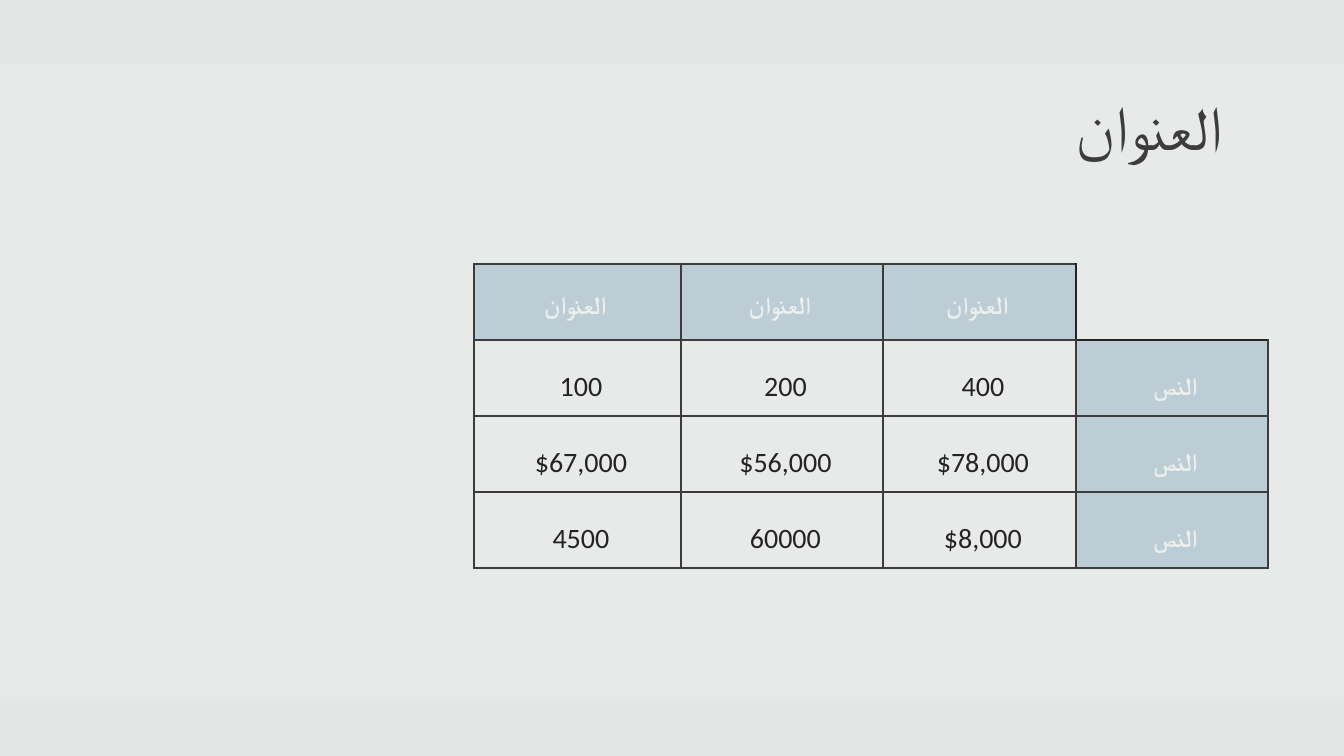
"""Build a slide with a right-aligned title and a table with headed sides."""
import pptx
import pptx.util
import pptx.dml.color
import pptx.enum.shapes
import pptx.enum.text
import pptx.oxml.ns
from dataclasses import dataclass
from lxml import etree

TITLE = "العنوان"
ROWS = [
    ["العنوان", "العنوان", "العنوان", ""],
    ["100", "200", "400", "النص"],
    ["$67,000", "$56,000", "$78,000", "النص"],
    ["4500", "60000", "$8,000", "النص"],
]
SLIDE = (1344, 756)
BAND = (0, 64, 1344, 633)
HEAD = (508, 83, 725, 85)
GRID = (474, 264)
COLS = [207, 202, 193, 192]
TALL = 76
PADS = {"head": (0, 27, 4, 0), "body": (11, 20, 4, 2)}


@dataclass(frozen=True)
class Theme:
    """Hold the colours, font and type sizes."""
    back: str = "E3E6E5"
    pale: str = "EDEFED"
    blue: str = "BCCDD6"
    line: str = "3C3C3C"
    ink: str = "232323"
    font: str = "Calibri"
    title: int = 44
    label: int = 18
    value: int = 20


LOOK = Theme()
QN = pptx.oxml.ns.qn
ALIGN = pptx.enum.text.PP_ALIGN
ANCHOR = pptx.enum.text.MSO_ANCHOR
THICK = (LOOK.line, 1.5)
THIN = (LOOK.ink, 1)


def px(num):
    """Turn px into EMU."""
    return round(num * 914400 / 100.8)


def rgb(code):
    """Turn a hex code into a colour."""
    return pptx.dml.color.RGBColor.from_string(code)


def write(frame, text, size, tint, align, bold=False):
    """Put one styled paragraph in a text frame."""
    frame.text = text
    para = frame.paragraphs[0]
    para.alignment = align
    for run in para.runs:
        font = run.font
        font.name, font.size, font.bold = LOOK.font, pptx.util.Pt(size), bold
        font.color.rgb = rgb(tint)
        etree.SubElement(run._r.get_or_add_rPr(), QN("a:cs"), typeface=LOOK.font)


def edge(cell, side, pen):
    """Draw one side of a cell, or hide it when there is no pen."""
    line = etree.SubElement(cell._tc.get_or_add_tcPr(), QN("a:ln" + side))
    if pen is None:
        etree.SubElement(line, QN("a:noFill"))
        return
    tint, width = pen
    line.set("w", str(pptx.util.Pt(width)))
    fill = etree.SubElement(line, QN("a:solidFill"))
    etree.SubElement(fill, QN("a:srgbClr"), val=tint)


def pens(row, col):
    """Choose the four side pens of a cell."""
    sides = dict.fromkeys("LRTB", THICK)
    last = len(COLS) - 1
    if (row, col) == (0, last):
        sides = {"L": THIN, "R": None, "T": None, "B": THIN}
    elif (row, col) == (0, last - 1):
        sides["R"] = THIN
    elif (row, col) == (1, last):
        sides["T"] = THIN
    return sides


def add_band(slide):
    """Add the pale band behind the content."""
    kind = pptx.enum.shapes.MSO_SHAPE.RECTANGLE
    band = slide.shapes.add_shape(kind, *map(px, BAND))
    band.shadow.inherit = False
    band.fill.solid()
    band.fill.fore_color.rgb = rgb(LOOK.pale)
    tint = band.fill._xPr.find(".//" + QN("a:srgbClr"))
    etree.SubElement(tint, QN("a:alpha"), val="55000")
    band.line.fill.background()


def add_grid(slide):
    """Add the table with its top and right headings."""
    size = (sum(COLS), TALL * len(ROWS))
    spot = map(px, GRID + size)
    table = slide.shapes.add_table(len(ROWS), len(COLS), *spot).table
    table.first_row = table.horz_banding = False
    for col, wide in zip(table.columns, COLS):
        col.width = px(wide)
    for r, texts in enumerate(ROWS):
        table.rows[r].height = px(TALL)
        for c, text in enumerate(texts):
            cell = table.cell(r, c)
            top = r == 0
            label = top or c == len(COLS) - 1
            pads = PADS["head" if top else "body"]
            (cell.margin_left, cell.margin_top,
             cell.margin_right, cell.margin_bottom) = map(px, pads)
            cell.vertical_anchor = ANCHOR.TOP if top else ANCHOR.MIDDLE
            for side, pen in pens(r, c).items():
                edge(cell, side, pen)
            if label and text:
                cell.fill.solid()
                cell.fill.fore_color.rgb = rgb(LOOK.blue)
            else:
                cell.fill.background()
            write(cell.text_frame, text, LOOK.label if label else LOOK.value,
                  LOOK.pale if label else LOOK.ink, ALIGN.CENTER, label)


def add_title(slide):
    """Add the title."""
    frame = slide.shapes.add_textbox(*map(px, HEAD)).text_frame
    frame.word_wrap = True
    frame.vertical_anchor = ANCHOR.BOTTOM
    write(frame, TITLE, LOOK.title, LOOK.line, ALIGN.RIGHT)


def main():
    """Build and save the slide."""
    deck = pptx.Presentation()
    deck.slide_width, deck.slide_height = map(px, SLIDE)
    slide = deck.slides.add_slide(deck.slide_layouts[6])
    slide.background.fill.solid()
    slide.background.fill.fore_color.rgb = rgb(LOOK.back)
    add_band(slide)
    add_grid(slide)
    add_title(slide)
    deck.save("out.pptx")


if __name__ == "__main__":
    main()
